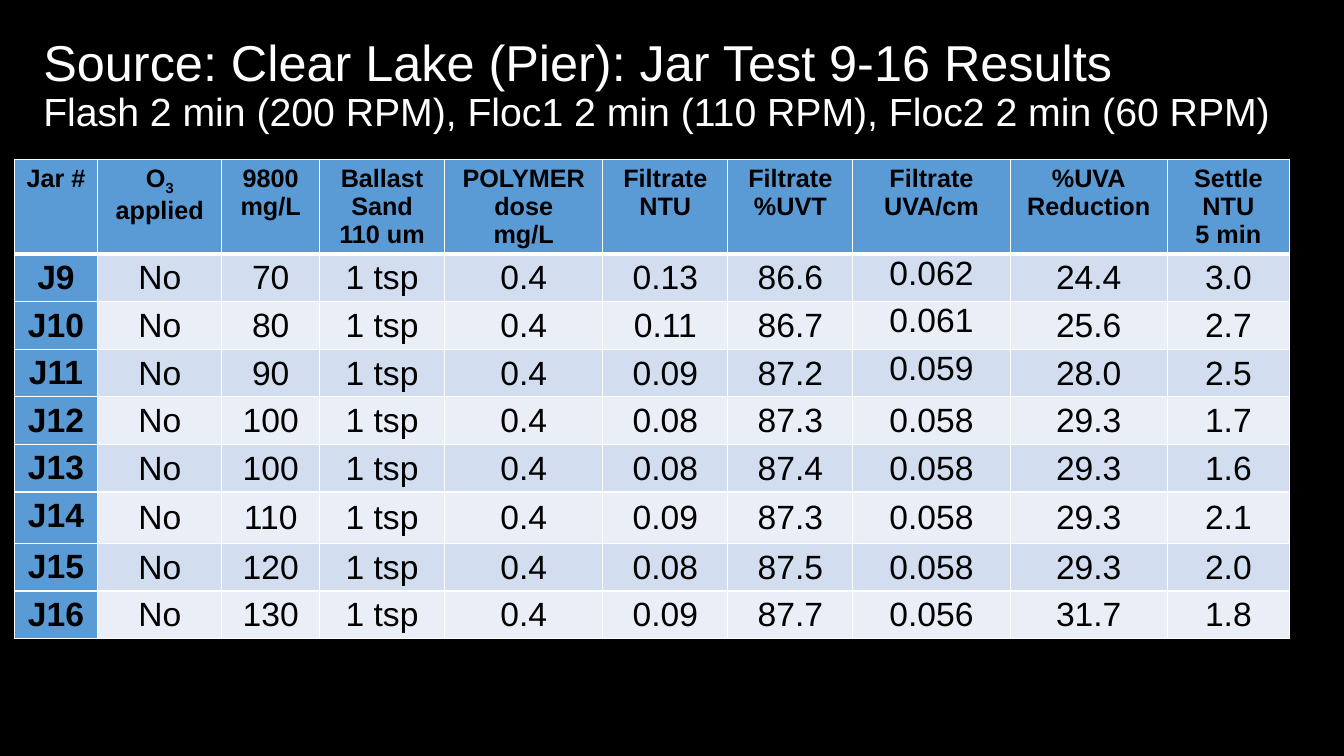
import copy

import pptx
import pptx.dml.color
import pptx.enum.text
import pptx.oxml
import pptx.oxml.ns
import pptx.util

Inches = pptx.util.Inches
Color = pptx.dml.color.RGBColor
Anchor = pptx.enum.text.MSO_ANCHOR
BLACK = Color(0x00, 0x00, 0x00)
WHITE = Color(0xFF, 0xFF, 0xFF)
BLUE = Color(0x5B, 0x9B, 0xD5)
BANDS = (Color(0xD2, 0xDE, 0xEF), Color(0xEA, 0xEF, 0xF7))

TITLE = "Source: Clear Lake (Pier): Jar Test 9-16 Results"
STAGES = "Flash 2 min (200 RPM), Floc1 2 min (110 RPM), Floc2 2 min (60 RPM)"
HEADS = (
    "Jar #", "O3\napplied", "9800\nmg/L", "Ballast\nSand\n110 um",
    "POLYMER\ndose\nmg/L", "Filtrate\nNTU", "Filtrate\n%UVT",
    "Filtrate\nUVA/cm", "%UVA\nReduction", "Settle\nNTU\n5 min",
)
JARS = (
    ("J9", "70", "0.13", "86.6", "0.062", "24.4", "3.0"),
    ("J10", "80", "0.11", "86.7", "0.061", "25.6", "2.7"),
    ("J11", "90", "0.09", "87.2", "0.059", "28.0", "2.5"),
    ("J12", "100", "0.08", "87.3", "0.058", "29.3", "1.7"),
    ("J13", "100", "0.08", "87.4", "0.058", "29.3", "1.6"),
    ("J14", "110", "0.09", "87.3", "0.058", "29.3", "2.1"),
    ("J15", "120", "0.08", "87.5", "0.058", "29.3", "2.0"),
    ("J16", "130", "0.09", "87.7", "0.056", "31.7", "1.8"),
)
WIDTHS = (0.83, 1.23, 0.97, 1.24, 1.57, 1.24, 1.24, 1.56, 1.56, 1.21)
HEIGHTS = (0.93,) + (0.47,) * 5 + (0.51,) + (0.47,) * 2
UVA = 7


class Deck:
    """Hold the style and the slide, and draw its title and table."""

    def __init__(self):
        self.show = pptx.Presentation()
        self.show.slide_width = Inches(13.33)
        self.show.slide_height = Inches(7.5)
        self.slide = self.show.slides.add_slide(self.show.slide_layouts[5])
        back = self.slide.background.fill
        back.solid()
        back.fore_color.rgb = BLACK
        self.font = "Arial"

    def run(self, para, text, size, color, bold=False):
        run = para.add_run()
        run.text = text
        run.font.name = self.font
        run.font.size = pptx.util.Pt(size)
        run.font.color.rgb = color
        run.font.bold = bold
        return run

    def title(self, main, sub):
        shape = self.slide.shapes.title
        shape.left, shape.top = Inches(0.33), Inches(0.13)
        shape.width, shape.height = Inches(12.47), Inches(1.45)
        frame = shape.text_frame
        frame.word_wrap = True
        frame.auto_size = pptx.enum.text.MSO_AUTO_SIZE.NONE
        frame.vertical_anchor = Anchor.MIDDLE
        para = frame.paragraphs[0]
        para.alignment = pptx.enum.text.PP_ALIGN.LEFT
        para.line_spacing = 0.9
        first = self.run(para, main, 36, WHITE)
        para.add_line_break()
        para._p[-1].append(copy.deepcopy(first._r.rPr))
        self.run(para, sub, 28, WHITE)

    def edges(self, cell, row):
        space = pptx.oxml.ns.nsdecls("a")
        props = cell._tc.get_or_add_tcPr()
        for side in "LRTB":
            thick = (row, side) in ((0, "B"), (1, "T"))
            width = pptx.util.Pt(3 if thick else 1)
            props.append(pptx.oxml.parse_xml(
                f'<a:ln{side} {space} w="{width}"><a:solidFill>'
                f'<a:srgbClr val="{WHITE}"/></a:solidFill></a:ln{side}>'))

    def cell(self, cell, text, row, col):
        head = row == 0 or col == 0
        self.edges(cell, row)
        cell.fill.solid()
        cell.fill.fore_color.rgb = BLUE if head else BANDS[(row - 1) % 2]
        if not head:
            cell.margin_left = cell.margin_right = Inches(0.01)
            cell.margin_top, cell.margin_bottom = Inches(0.01), 0
            high = col == UVA and row <= 3
            cell.vertical_anchor = Anchor.TOP if high else Anchor.MIDDLE
        frame = cell.text_frame
        size = 24 if row else 18
        for num, line in enumerate(text.split("\n")):
            para = frame.add_paragraph() if num else frame.paragraphs[0]
            para.alignment = pptx.enum.text.PP_ALIGN.CENTER
            if line == "O3":
                self.run(para, "O", size, BLACK, head)
                low = self.run(para, "3", size, BLACK, head)
                low.font._element.set("baseline", "-25000")
            else:
                self.run(para, line, size, BLACK, head)

    def table(self, rows):
        table = self.slide.shapes.add_table(
            len(rows), len(WIDTHS), Inches(0.14), Inches(1.58),
            Inches(sum(WIDTHS)), Inches(sum(HEIGHTS))).table
        for col, width in zip(table.columns, WIDTHS):
            col.width = Inches(width)
        for row, height in zip(table.rows, HEIGHTS):
            row.height = Inches(height)
        for row, texts in enumerate(rows):
            for col, text in enumerate(texts):
                self.cell(table.cell(row, col), text, row, col)


def main():
    deck = Deck()
    rows = [HEADS]
    for jar, dose, *rest in JARS:
        rows.append((jar, "No", dose, "1 tsp", "0.4", *rest))
    deck.table(rows)
    deck.title(TITLE, STAGES)
    deck.show.save("out.pptx")


if __name__ == "__main__":
    main()
